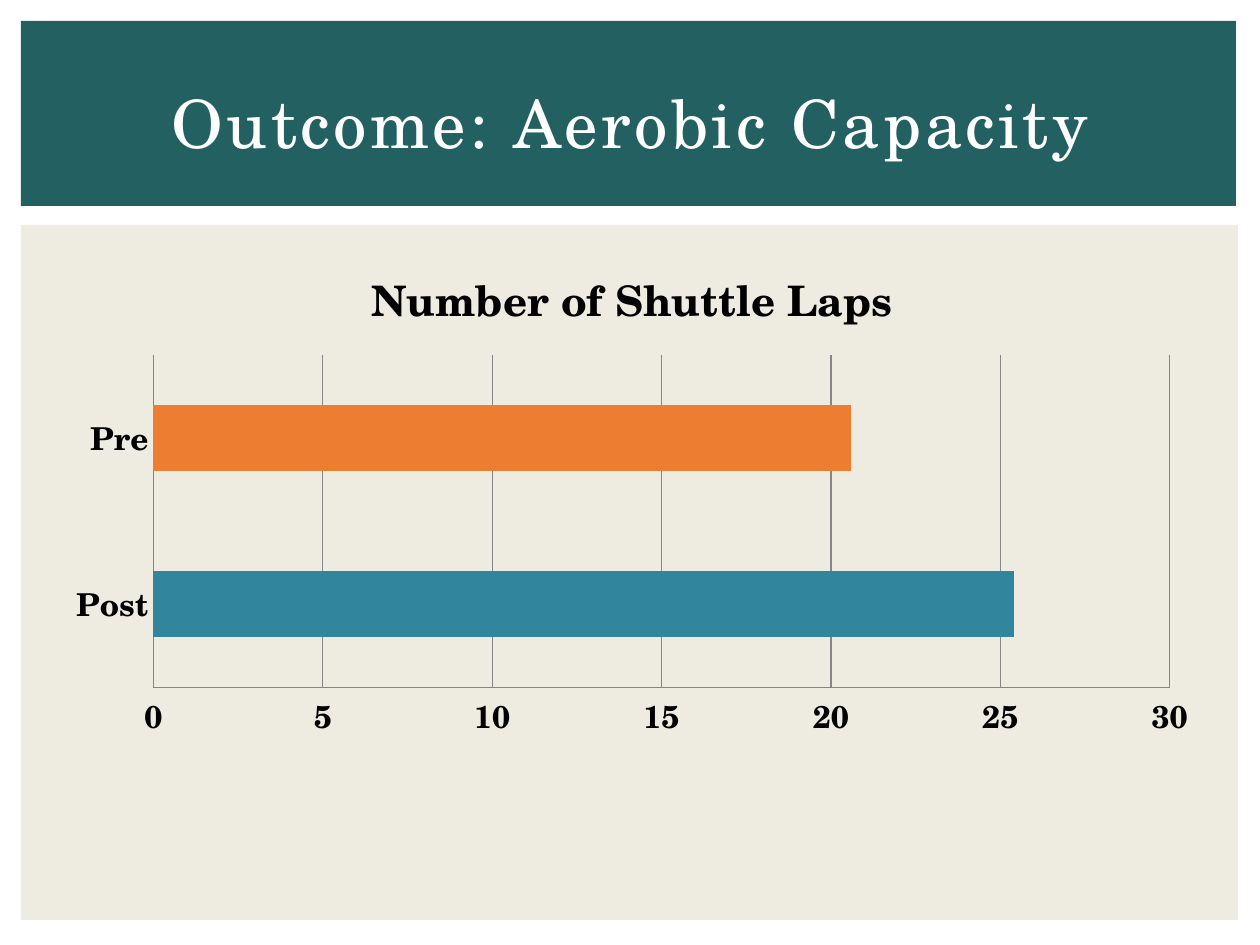
from pptx import Presentation, util as u
from pptx.chart.data import CategoryChartData
from pptx.dml.color import RGBColor
from pptx.enum import chart as ch, shapes, text

FONT = "TeX Gyre Schola"
INK = {"sand": "EEECE1", "teal": "236062", "white": "FFFFFF", "black": "000000",
       "grid": "868686", "series": "1A727E"}
TITLE = "Outcome: Aerobic Capacity"
CHART = "Number of Shuttle Laps"
LAPS = [("Post", 25.4, "31859C"), ("Pre", 20.6, "ED7D31")]
PANELS = [((21, 225, 1217, 695), "sand"), ((21, 21, 1215, 185), "teal")]
HEAD = (53, 49, 1155, 145)
PLOT = (53, 237, 1158, 514)


def px(*nums):
    return [u.Emu(round(n * 914400 / 126)) for n in nums]


def paint(fill, tint):
    fill.solid()
    fill.fore_color.rgb = RGBColor.from_string(tint)


def style(font, size, tint, bold):
    font.name, font.size, font.bold = FONT, u.Pt(size), bold
    font.color.rgb = RGBColor.from_string(INK[tint])


def rule(line):
    line.color.rgb = RGBColor.from_string(INK["grid"])
    line.width = u.Pt(0.75)


def add_panels(slide):
    for box, tint in PANELS:
        panel = slide.shapes.add_shape(shapes.MSO_SHAPE.RECTANGLE, *px(*box))
        panel.shadow.inherit = False
        paint(panel.fill, INK[tint])
        panel.line.fill.background()


def add_head(slide):
    frame = slide.shapes.add_textbox(*px(*HEAD)).text_frame
    frame.word_wrap = True
    frame.vertical_anchor = text.MSO_ANCHOR.MIDDLE
    para = frame.paragraphs[0]
    para.alignment = text.PP_ALIGN.CENTER
    run = para.add_run()
    run.text = TITLE
    style(run.font, 38, "white", False)
    run._r.get_or_add_rPr().set("spc", "200")


def add_laps(slide):
    names, vals, tints = zip(*LAPS)
    data = CategoryChartData()
    data.categories = names
    data.add_series("Series 1", vals)
    chart = slide.shapes.add_chart(
        ch.XL_CHART_TYPE.BAR_CLUSTERED, *px(*PLOT), data).chart
    style(chart.font, 10, "black", False)
    chart.has_legend = False
    chart.has_title = True
    para = chart.chart_title.text_frame.paragraphs[0]
    para.text = CHART
    style(para.font, 24, "black", True)

    for axis in (chart.category_axis, chart.value_axis):
        style(axis.tick_labels.font, 18, "black", True)
        axis.major_tick_mark = axis.minor_tick_mark = ch.XL_TICK_MARK.NONE
        rule(axis.format.line)
    chart.category_axis.has_major_gridlines = False
    axis = chart.value_axis
    axis.minimum_scale, axis.maximum_scale, axis.major_unit = 0, 30, 5
    axis.has_major_gridlines = True
    rule(axis.major_gridlines.format.line)

    plot = chart.plots[0]
    plot.gap_width = 150
    plot.vary_by_categories = False
    bars = plot.series[0]
    paint(bars.format.fill, INK["series"])
    for i, tint in enumerate(tints):
        paint(bars.points[i].format.fill, tint)


def main():
    deck = Presentation()
    deck.slide_width, deck.slide_height = px(1260, 945)
    slide = deck.slides.add_slide(deck.slide_layouts[6])
    add_panels(slide)
    add_head(slide)
    add_laps(slide)
    deck.save("out.pptx")


if __name__ == "__main__":
    main()
